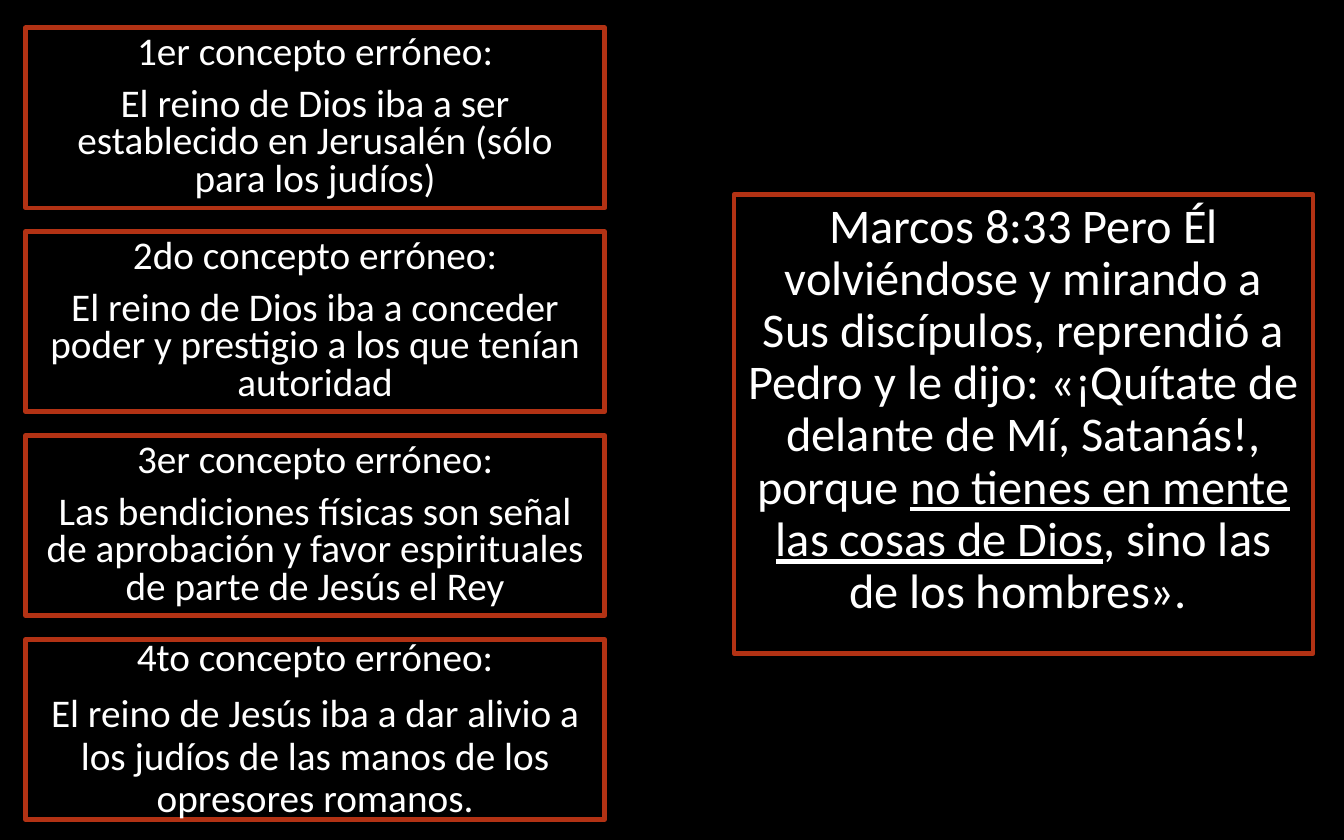
from pptx import Presentation
from pptx.dml.color import RGBColor
from pptx.enum.shapes import MSO_SHAPE
from pptx.enum.text import MSO_ANCHOR, PP_ALIGN
from pptx.util import Pt

RECT = MSO_SHAPE.RECTANGLE
TOP, MIDDLE = MSO_ANCHOR.TOP, MSO_ANCHOR.MIDDLE
CENTER = PP_ALIGN.CENTER

BLACK, WHITE, RUST = "000000", "FFFFFF", "B23214"
BOX_W, BOX_H = 310.3, 96.5
LEFT, FIRST_TOP, PITCH = 13.7, 14.9, 109.2

CONCEPTS = [
    ("1er concepto erróneo:",
     "El reino de Dios iba a ser establecido en Jerusalén (sólo para los judíos)", 0.8),
    ("2do concepto erróneo:",
     "El reino de Dios iba a conceder poder y prestigio a los que tenían autoridad", 0.8),
    ("3er concepto erróneo:",
     "Las bendiciones físicas son señal de aprobación y favor espirituales "
     "de parte de Jesús el Rey", 0.8),
    ("4to concepto erróneo:",
     "El reino de Jesús iba a dar alivio a los judíos de las manos de los "
     "opresores romanos.", 0.9),
]
VERSE = [
    ("Marcos 8:33 Pero Él volviéndose y mirando a Sus discípulos, reprendió a "
     "Pedro y le dijo: «¡Quítate de delante de Mí, Satanás!, porque ", False),
    ("no tienes en mente las cosas de Dios", True),
    (", sino las de los hombres». ", False),
]


def color(value):
    """Return the colour for a hex string."""
    return RGBColor.from_string(value)


def set_attrs(obj, values):
    """Set each attribute of obj named in values."""
    for name, value in values.items():
        setattr(obj, name, value)


def add_box(s, left, top, height, anchor):
    """Add an outlined box and return its text frame."""
    sp = s.shapes.add_shape(RECT, Pt(left), Pt(top), Pt(BOX_W), Pt(height))
    sp.shadow.inherit = False
    sp.fill.background()
    sp.line.color.rgb = color(RUST)
    sp.line.width = Pt(2.5)
    tf = sp.text_frame
    set_attrs(tf, {"word_wrap": True, "vertical_anchor": anchor})
    return tf


def fill_paragraph(p, runs, size, spacing):
    """Write (text, underline) runs into a centred paragraph."""
    set_attrs(p, {"alignment": CENTER, "line_spacing": spacing,
                  "space_before": Pt(7.5)})
    for text, underline in runs:
        r = p.add_run()
        r.text = text
        set_attrs(r.font, {"name": "Calibri", "size": Pt(size),
                           "underline": underline})
        r.font.color.rgb = color(WHITE)


def add_concept(s, top, heading, body, spacing):
    """Add one misconception box with its heading and statement."""
    tf = add_box(s, LEFT, top, BOX_H, MIDDLE)
    fill_paragraph(tf.paragraphs[0], [(heading, False)], 21, spacing)
    fill_paragraph(tf.add_paragraph(), [(body, False)], 21, spacing)


def add_verse(s):
    """Add the Bible verse box on the right."""
    tf = add_box(s, 393.2, 104.3, 245.7, TOP)
    fill_paragraph(tf.paragraphs[0], VERSE, 25.9, 0.9)


def main():
    """Build and save the slide."""
    prs = Presentation()
    set_attrs(prs, {"slide_width": Pt(720), "slide_height": Pt(450)})
    s = prs.slides.add_slide(prs.slide_layouts[6])
    s.background.fill.solid()
    s.background.fill.fore_color.rgb = color(BLACK)
    for i, concept in enumerate(CONCEPTS):
        add_concept(s, FIRST_TOP + i * PITCH, *concept)
    add_verse(s)
    prs.save("out.pptx")


if __name__ == "__main__":
    main()
